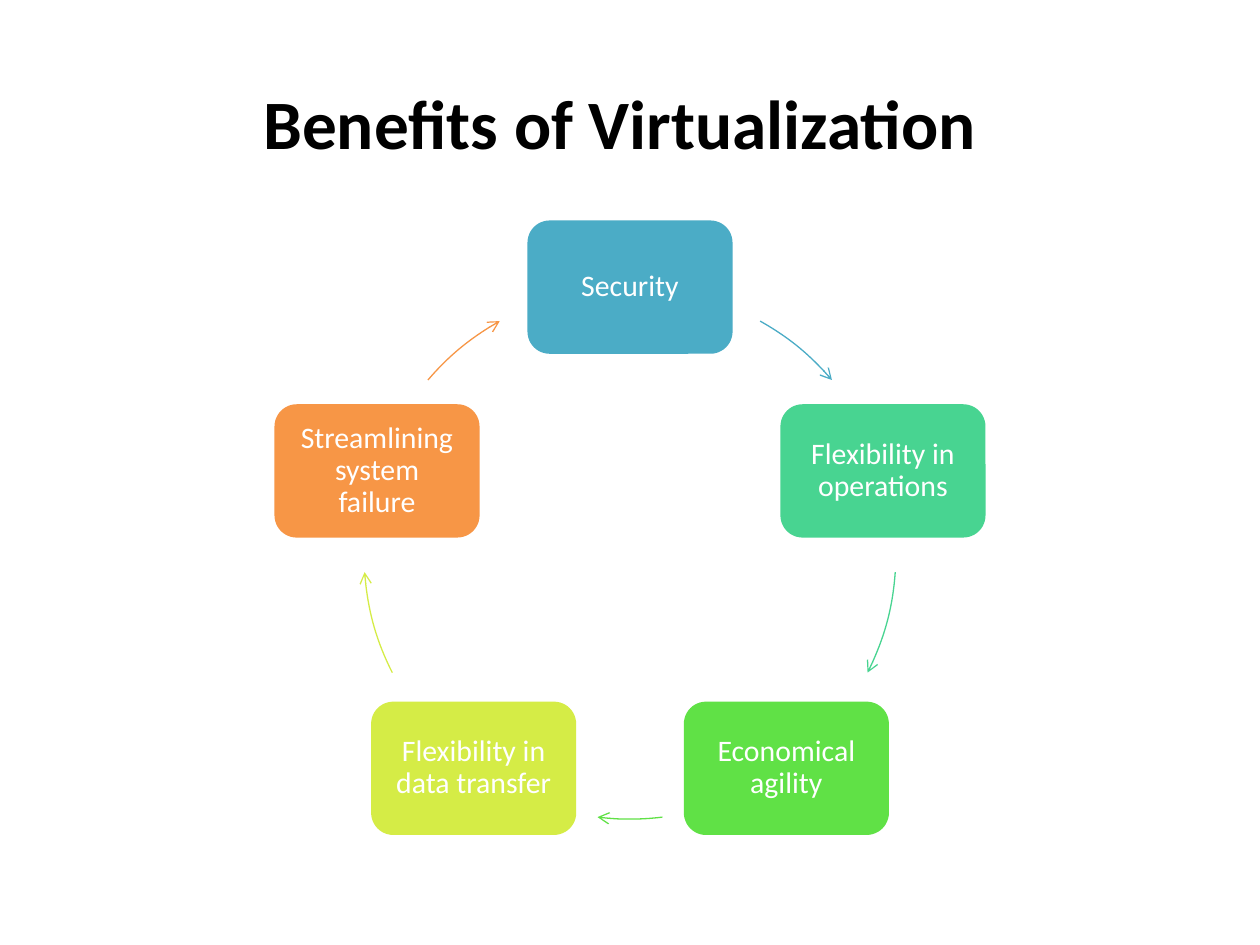
from dataclasses import dataclass
import math

import pptx
import pptx.dml.color
import pptx.enum.shapes
import pptx.enum.text
import pptx.oxml
import pptx.oxml.ns
import pptx.util

Pt = pptx.util.Pt
RGBColor = pptx.dml.color.RGBColor
MSO_SHAPE = pptx.enum.shapes.MSO_SHAPE

BLACK = RGBColor(0x00, 0x00, 0x00)
WHITE = RGBColor(0xFF, 0xFF, 0xFF)
TEAL = RGBColor(0x4B, 0xAC, 0xC6)
MINT = RGBColor(0x48, 0xD4, 0x91)
GREEN = RGBColor(0x60, 0xE1, 0x46)
LIME = RGBColor(0xD5, 0xEC, 0x46)
ORANGE = RGBColor(0xF7, 0x96, 0x46)

FONT = "Calibri"
CENTER_X, CENTER_Y, RADIUS = 360, 316.1, 152
BOX_WIDTH, BOX_HEIGHT = 117.2, 76.2
BOX_INSET = 8.8


@dataclass
class Benefit:
    label: str
    color: RGBColor
    arrow_start: float  # degrees clockwise from the top of the ring
    arrow_end: float


BENEFITS = [
    Benefit("Security", TEAL, 29.3, 49.4),
    Benefit("Flexibility in operations", MINT, 94.1, 116.7),
    Benefit("Economical agility", GREEN, 173, 187),
    Benefit("Flexibility in data transfer", LIME, 243.3, 265.9),
    Benefit("Streamlining system failure", ORANGE, 310.6, 330.7),
]


def write_centered(frame, wording: str, size: float, color: RGBColor, bold: bool = False):
    frame.word_wrap = True
    frame.vertical_anchor = pptx.enum.text.MSO_ANCHOR.MIDDLE
    frame.text = wording
    paragraph = frame.paragraphs[0]
    paragraph.alignment = pptx.enum.text.PP_ALIGN.CENTER
    font = paragraph.runs[0].font
    font.name, font.size, font.bold = FONT, Pt(size), bold
    font.color.rgb = color
    return paragraph


def add_title(slide, wording: str) -> None:
    title = slide.shapes.add_textbox(Pt(36), Pt(21.6), Pt(648), Pt(90))
    write_centered(title.text_frame, wording, 39.6, BLACK, bold=True)
    # Uneven margins seat the heading slightly left of and below the middle.
    title.text_frame.margin_right = Pt(18.6)
    title.text_frame.margin_top = Pt(9)


def add_benefit_box(slide, benefit: Benefit, degrees: float) -> None:
    angle = math.radians(degrees)
    left = CENTER_X + RADIUS * math.sin(angle) - BOX_WIDTH / 2
    top = CENTER_Y - RADIUS * math.cos(angle) - BOX_HEIGHT / 2
    box = slide.shapes.add_shape(
        MSO_SHAPE.ROUNDED_RECTANGLE, Pt(left), Pt(top), Pt(BOX_WIDTH), Pt(BOX_HEIGHT)
    )
    box.shadow.inherit = False
    box.fill.solid()
    box.fill.fore_color.rgb = benefit.color
    box.line.fill.background()
    frame = box.text_frame
    frame.margin_left = frame.margin_right = Pt(BOX_INSET)
    frame.margin_top = frame.margin_bottom = Pt(5)
    write_centered(frame, benefit.label, 17, WHITE).line_spacing = 0.9


def add_ring_arrow(slide, benefit: Benefit) -> None:
    """Draw the part of the ring that leads from this benefit to the next."""
    arrow = slide.shapes.add_shape(
        MSO_SHAPE.ARC, Pt(CENTER_X - RADIUS), Pt(CENTER_Y - RADIUS),
        Pt(2 * RADIUS), Pt(2 * RADIUS),
    )
    # Arc angles run from three o'clock; one degree is 0.6 adjustment units.
    for index, degrees in enumerate((benefit.arrow_start, benefit.arrow_end)):
        arrow.adjustments[index] = (degrees - 90) % 360 * 0.6
    arrow.shadow.inherit = False
    arrow.fill.background()
    arrow.line.color.rgb = benefit.color
    arrow.line.width = Pt(0.75)
    outline = arrow.line._get_or_add_ln()
    outline.append(pptx.oxml.parse_xml(
        f'<a:tailEnd {pptx.oxml.ns.nsdecls("a")} type="arrow"/>'
    ))


def main() -> None:
    presentation = pptx.Presentation()
    presentation.slide_width, presentation.slide_height = Pt(720), Pt(540)
    slide = presentation.slides.add_slide(presentation.slide_layouts[6])
    add_title(slide, "Benefits of Virtualization")
    step = 360 / len(BENEFITS)
    for position, benefit in enumerate(BENEFITS):
        add_benefit_box(slide, benefit, position * step)
        add_ring_arrow(slide, benefit)
    presentation.save("out.pptx")


if __name__ == "__main__":
    main()
